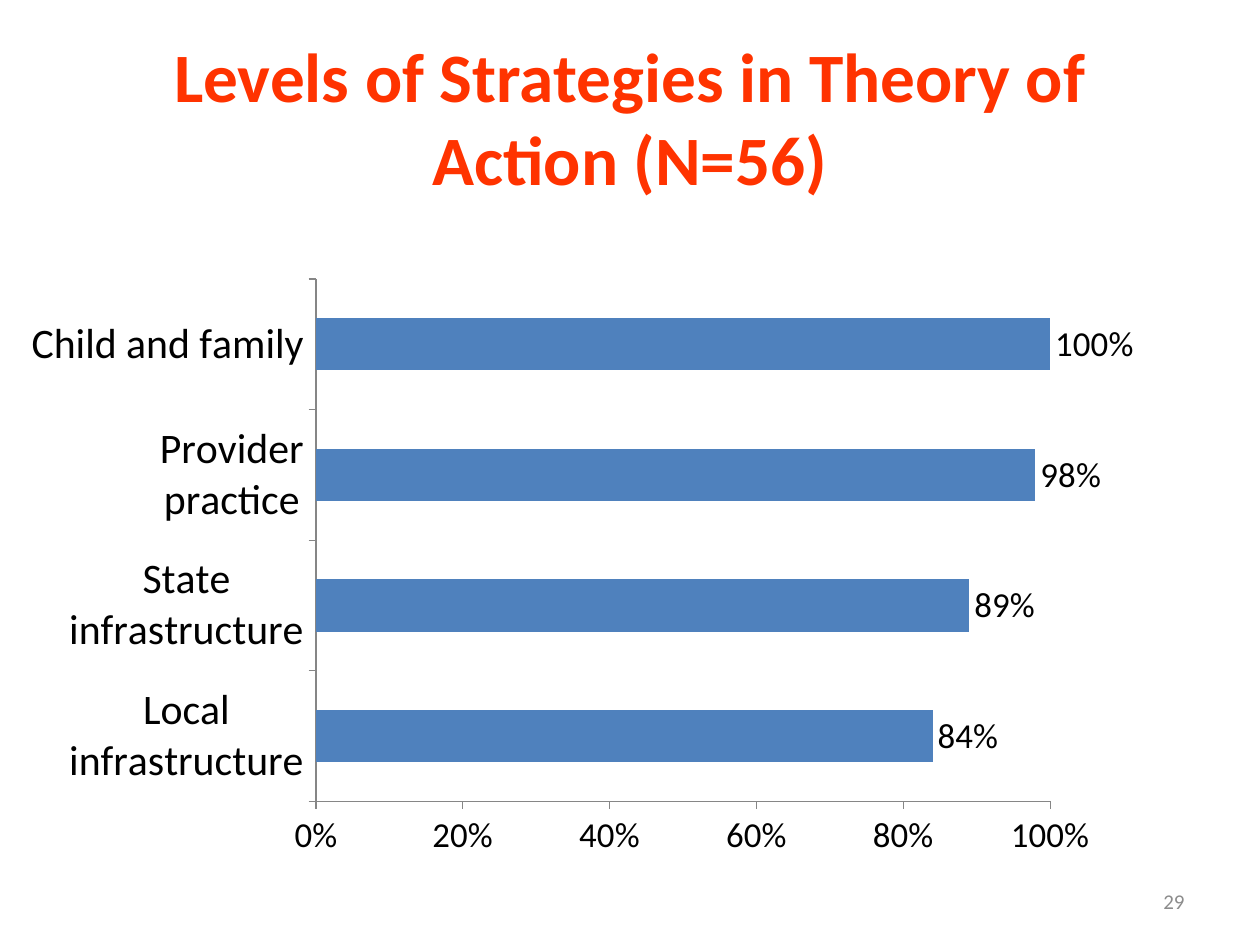
from lxml import etree
from pptx import Presentation
from pptx.chart.data import CategoryChartData
from pptx.dml.color import RGBColor
from pptx.enum.chart import XL_CHART_TYPE as Chart, XL_LABEL_POSITION as LabelPos, XL_TICK_MARK as Tick
from pptx.enum.text import MSO_ANCHOR as Anchor, PP_ALIGN as Align
from pptx.oxml.ns import qn
from pptx.util import Inches, Pt

LEVELS = {
    "Local infrastructure": 0.84,
    "State infrastructure": 0.89,
    "Provider practice": 0.98,
    "Child and family": 1,
}


def rgb(hex_color):
    return RGBColor.from_string(hex_color)


def style_font(font, size, color, name="Calibri", bold=False):
    font.name, font.size, font.bold = name, Pt(size), bold
    font.color.rgb = rgb(color)


def write(tf, text, align=Align.LEFT, anchor=Anchor.MIDDLE, **font):
    tf.word_wrap, tf.vertical_anchor = True, anchor
    p = tf.paragraphs[0]
    p.alignment = align
    r = p.add_run()
    r.text = text
    style_font(r.font, **font)


def set_plot_area(chart, x, y, w, h):
    """Fix the inner plot area, in shares of the chart's size."""
    plot_area = chart._chartSpace.chart.plotArea
    for old in plot_area.findall(qn("c:layout")):
        plot_area.remove(old)
    layout = etree.Element(qn("c:layout"))
    manual = etree.SubElement(layout, qn("c:manualLayout"))
    settings = {"layoutTarget": "inner", "xMode": "edge", "yMode": "edge",
                "x": x, "y": y, "w": w, "h": h}
    for tag, val in settings.items():
        etree.SubElement(manual, qn(f"c:{tag}")).set("val", str(val))
    plot_area.insert(0, layout)


class Deck:
    """Holds the style and the current slide; boxes are shares of the slide's size."""
    ACCENT, BAR, INK, AXIS, MUTED = "FF3300", "4F81BD", "000000", "868686", "8C8C8C"

    def __init__(self, width=10, height=7.5):
        self.prs = Presentation()
        self.prs.slide_width, self.prs.slide_height = Inches(width), Inches(height)

    def add_slide(self):
        self.s = self.prs.slides.add_slide(self.prs.slide_layouts[5])

    def box(self, x, y, w, h):
        width, height = self.prs.slide_width, self.prs.slide_height
        return int(x * width), int(y * height), int(w * width), int(h * height)

    def title(self, text, *area):
        sp = self.s.shapes.title
        sp.left, sp.top, sp.width, sp.height = self.box(*area)
        write(sp.text_frame, text, Align.CENTER, size=39.6, color=self.ACCENT, bold=True)

    def page_number(self, text, *area):
        sp = self.s.shapes.add_textbox(*self.box(*area))
        write(sp.text_frame, text, Align.RIGHT, size=12, color=self.MUTED)

    def style_axis(self, axis, size):
        axis.has_major_gridlines = False
        axis.major_tick_mark, axis.minor_tick_mark = Tick.OUTSIDE, Tick.NONE
        axis.format.line.color.rgb = rgb(self.AXIS)
        style_font(axis.tick_labels.font, size, self.INK)

    def bar_chart(self, values, *area):
        data = CategoryChartData(number_format="0%")
        data.categories = list(values)
        data.add_series("Series 1", list(values.values()))
        chart = self.s.shapes.add_chart(Chart.BAR_CLUSTERED, *self.box(*area), data).chart
        chart.has_legend = chart.has_title = False
        style_font(chart.font, 10, self.INK)
        set_plot_area(chart, 0.231, 0.216, 0.612, 0.691)

        self.style_axis(chart.category_axis, 24)
        axis = chart.value_axis
        self.style_axis(axis, 20)
        axis.minimum_scale, axis.maximum_scale, axis.major_unit = 0, 1, 0.2
        axis.tick_labels.number_format = "0%"
        axis.tick_labels.number_format_is_linked = False

        plot = chart.plots[0]
        plot.gap_width, plot.vary_by_categories = 150, False
        fill = plot.series[0].format.fill
        fill.solid()
        fill.fore_color.rgb = rgb(self.BAR)
        plot.has_data_labels = True
        labels = plot.data_labels
        labels.show_value, labels.position = True, LabelPos.OUTSIDE_END
        labels.number_format, labels.number_format_is_linked = "0%", False
        style_font(labels.font, 20, self.INK)


def main():
    deck = Deck()
    deck.add_slide()
    deck.title("Levels of Strategies in Theory of Action (N=56)", 0.05, 0.04, 0.9, 1 / 6)
    deck.bar_chart(LEVELS, 0.025, 0.1225, 0.958, 0.8)
    deck.page_number("29", 0.717, 0.927, 0.233, 0.053)
    deck.prs.save("out.pptx")


if __name__ == "__main__":
    main()
